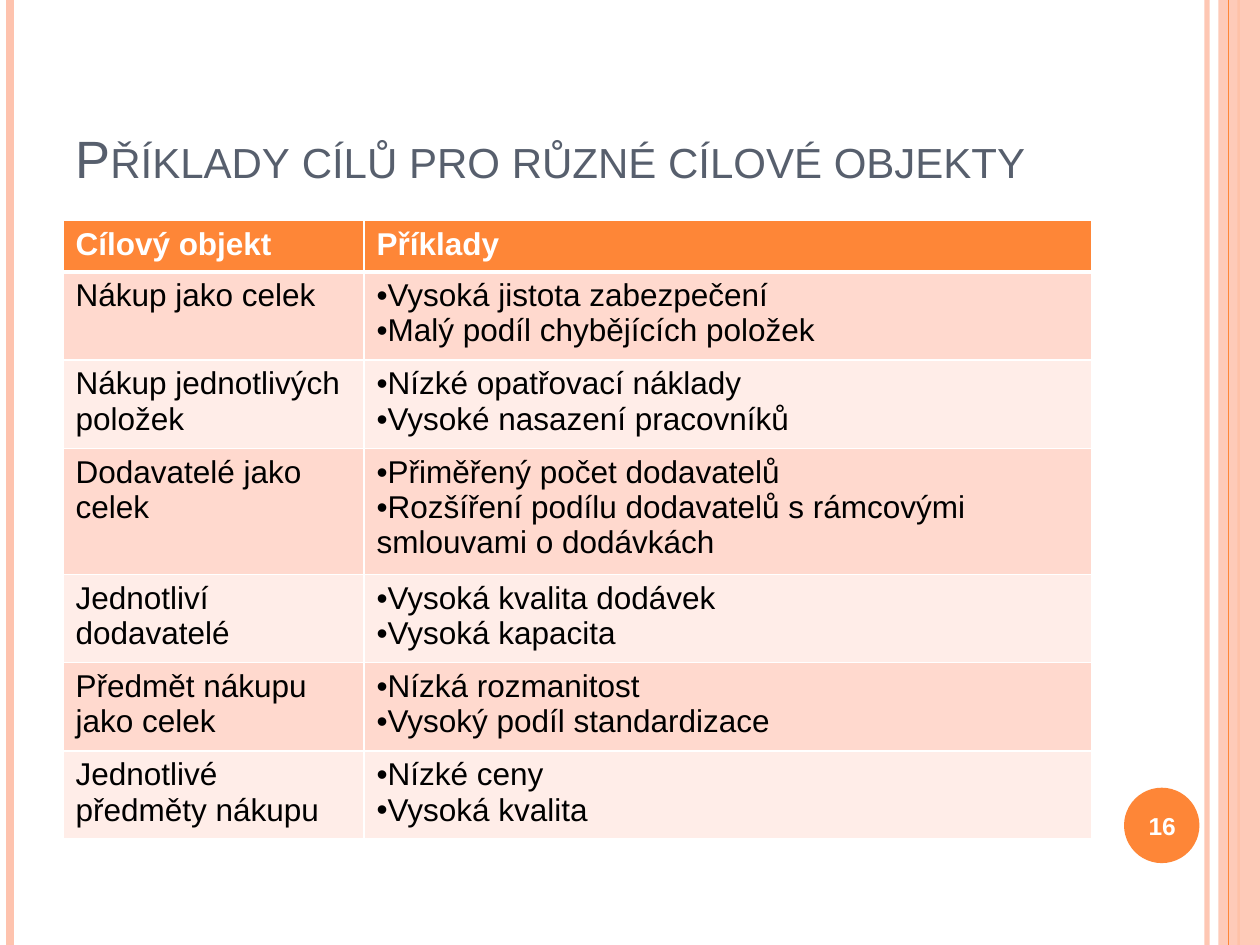
"""Build a slide with a table of purchasing goals for different target objects."""
from lxml import etree
from pptx import Presentation
from pptx.dml.color import RGBColor
from pptx.enum.shapes import MSO_CONNECTOR, MSO_SHAPE
from pptx.enum.text import MSO_ANCHOR, PP_ALIGN
from pptx.oxml.ns import qn
from pptx.util import Cm, Pt

STRAIGHT = MSO_CONNECTOR.STRAIGHT
RECTANGLE, OVAL = MSO_SHAPE.RECTANGLE, MSO_SHAPE.OVAL
BOTTOM, MIDDLE = MSO_ANCHOR.BOTTOM, MSO_ANCHOR.MIDDLE
CENTER = PP_ALIGN.CENTER

ORANGE = RGBColor(0xFE, 0x86, 0x37)
PEACH = RGBColor(0xFE, 0xC3, 0xAE)
SLATE = RGBColor(0x57, 0x5F, 0x6D)
DARK_BAND = RGBColor(0xFF, 0xD9, 0xCE)
LIGHT_BAND = RGBColor(0xFF, 0xED, 0xE8)
WHITE = RGBColor(0xFF, 0xFF, 0xFF)
BLACK = RGBColor(0, 0, 0)

FONT = "Arial"
SLIDE_WIDTH, SLIDE_HEIGHT = Cm(25.4), Cm(19.05)

ROWS = [
    ("Cílový objekt", ["Příklady"]),
    ("Nákup jako celek",
     ["Vysoká jistota zabezpečení", "Malý podíl chybějících položek"]),
    ("Nákup jednotlivých položek",
     ["Nízké opatřovací náklady", "Vysoké nasazení pracovníků"]),
    ("Dodavatelé jako celek",
     ["Přiměřený počet dodavatelů",
      "Rozšíření podílu dodavatelů s rámcovými smlouvami o dodávkách"]),
    ("Jednotliví dodavatelé", ["Vysoká kvalita dodávek", "Vysoká kapacita"]),
    ("Předmět nákupu jako celek", ["Nízká rozmanitost", "Vysoký podíl standardizace"]),
    ("Jednotlivé předměty nákupu", ["Nízké ceny", "Vysoká kvalita"]),
]


def style_text(frame, size, color, bold=False):
    for para in frame.paragraphs:
        for span in para.runs:
            span.font.name = FONT
            span.font.size = Pt(size)
            span.font.color.rgb = color
            span.font.bold = bold


def set_alpha(properties, percent):
    color = properties.find(".//" + qn("a:srgbClr"))
    etree.SubElement(color, qn("a:alpha"), val=str(percent * 1000))


deck = Presentation()
deck.slide_width, deck.slide_height = SLIDE_WIDTH, SLIDE_HEIGHT
page = deck.slides.add_slide(deck.slide_layouts[6])
shapes = page.shapes

band = shapes.add_shape(RECTANGLE, Cm(24.56), 0, Cm(0.84), SLIDE_HEIGHT)
badge = shapes.add_shape(OVAL, Cm(22.66), Cm(15.88), Cm(1.52), Cm(1.52))
for shape, color in [(band, PEACH), (badge, ORANGE)]:
    shape.shadow.inherit = False
    shape.fill.solid()
    shape.fill.fore_color.rgb = color
    shape.line.fill.background()
set_alpha(band._element.spPr, 87)

for x, color, weight, opacity in [
    (24.33, PEACH, 3, 93),
    (0.21, PEACH, 4.5, 100),
    (24.97, ORANGE, 1.5, 13),
    (24.77, ORANGE, 0.75, 100),
]:
    stripe = shapes.add_connector(STRAIGHT, Cm(x), 0, Cm(x), SLIDE_HEIGHT)
    stripe.line.color.rgb = color
    stripe.line.width = Pt(weight)
    etree.SubElement(stripe._element.spPr, qn("a:effectLst"))
    if opacity < 100:
        set_alpha(stripe._element.spPr, opacity)

title = shapes.add_textbox(Cm(1.27), Cm(0.76), Cm(20.75), Cm(3.18)).text_frame
title.word_wrap = True
title.vertical_anchor = BOTTOM
title.text = "Příklady cílů pro různé cílové objekty"
style_text(title, 30, SLATE)
title.paragraphs[0].runs[0].font._element.set("cap", "small")

table = shapes.add_table(
    len(ROWS), 2, Cm(1.27), Cm(4.45), Cm(20.75), Cm(1.03) * len(ROWS)).table
table.columns[0].width, table.columns[1].width = Cm(6.07), Cm(14.67)

for row_index, (target, examples) in enumerate(ROWS):
    is_header = row_index == 0
    band_color = DARK_BAND if row_index % 2 else LIGHT_BAND
    for column_index, lines in enumerate([[target], examples]):
        cell = table.cell(row_index, column_index)
        cell.text_frame.text = "\n".join(lines)
        style_text(cell.text_frame, 18, WHITE if is_header else BLACK, is_header)
        if column_index == 1 and not is_header:
            for para in cell.text_frame.paragraphs:
                para_properties = para._p.get_or_add_pPr()
                etree.SubElement(para_properties, qn("a:buFont"), typeface=FONT)
                etree.SubElement(para_properties, qn("a:buChar"), char="•")
        properties = cell._tc.get_or_add_tcPr()
        for side in ("L", "R", "T", "B"):
            thick = (is_header and side == "B") or (row_index == 1 and side == "T")
            border = etree.SubElement(
                properties, qn("a:ln" + side), w=str(Pt(3 if thick else 1)))
            fill = etree.SubElement(border, qn("a:solidFill"))
            etree.SubElement(fill, qn("a:srgbClr"), val=str(WHITE))
        cell.fill.solid()
        cell.fill.fore_color.rgb = ORANGE if is_header else band_color

number = shapes.add_textbox(Cm(22.58), Cm(15.93), Cm(1.7), Cm(1.45)).text_frame
number.word_wrap = True
number.vertical_anchor = MIDDLE
number.text = "16"
number.paragraphs[0].alignment = CENTER
style_text(number, 14, WHITE, True)

deck.save("out.pptx")
